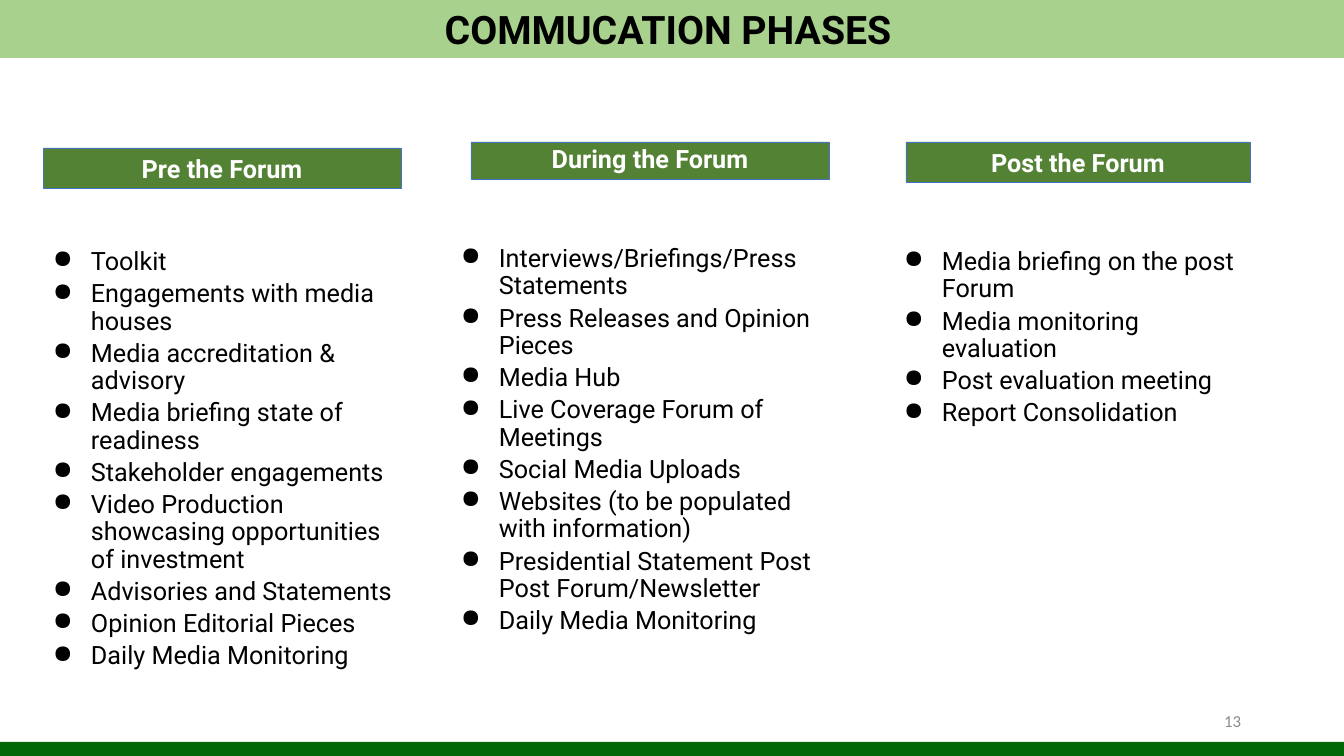
from dataclasses import dataclass

from lxml.etree import SubElement
from pptx import Presentation
from pptx.dml.color import RGBColor
from pptx.enum.shapes import MSO_SHAPE as Shape
from pptx.enum.text import MSO_ANCHOR as Anchor, MSO_AUTO_SIZE as AutoSize, PP_ALIGN as Align
from pptx.oxml.ns import qn
from pptx.util import Pt

TITLE = "COMMUCATION PHASES"
PAGE_NUMBER = "13"
PHASES = [
    {
        "name": "Pre the Forum",
        "bar": (43, 148, 358, 40),
        "list": (43, 244, 363, 499),
        "spacing": 1.0,
        "items": [
            "Toolkit",
            "Engagements with media houses",
            "Media accreditation & advisory",
            "Media briefing state of readiness",
            "Stakeholder engagements",
            "Video Production showcasing opportunities of investment",
            "Advisories and Statements",
            "Opinion Editorial Pieces",
            "Daily Media Monitoring",
        ],
    },
    {
        "name": "During the Forum",
        "bar": (471, 142, 358, 37),
        "list": (451, 241, 382, 499),
        "spacing": 0.9,
        "items": [
            "Interviews/Briefings/Press Statements",
            "Press Releases and Opinion Pieces",
            "Media Hub",
            "Live Coverage Forum of Meetings",
            "Social Media Uploads",
            "Websites (to be populated with information)",
            "Presidential Statement Post Post Forum/Newsletter",
            "Daily Media Monitoring",
        ],
    },
    {
        "name": "Post the Forum",
        "bar": (906, 142, 344, 40),
        "list": (894, 244, 369, 499),
        "spacing": 1.0,
        "items": [
            "Media briefing on the post Forum",
            "Media monitoring evaluation",
            "Post evaluation meeting",
            "Report Consolidation",
        ],
    },
]


@dataclass(frozen=True)
class Theme:
    font: str = "Roboto"
    number_font: str = "Calibri"
    title_size: int = 28
    body_size: int = 18
    number_size: int = 12
    black: str = "000000"
    white: str = "FFFFFF"
    grey: str = "8C8C8C"
    band: str = "A9D18E"
    bar: str = "548235"
    outline: str = "4472C4"
    footer: str = "006806"


THEME = Theme()
WIDTH, HEIGHT = 1344, 756
INDENT, TAB = 38, 113
ITEM_GAP = 3.6


def px(length):
    return round(length * 914400 / 100.8)


def style(para, size, color, font=THEME.font, bold=False):
    para.font.name = font
    para.font.size = Pt(size)
    para.font.bold = bold
    para.font.color.rgb = RGBColor.from_string(color)


def add_bar(page, frame, fill, outline=None):
    bar = page.shapes.add_shape(Shape.RECTANGLE, *map(px, frame))
    bar.shadow.inherit = False
    bar.fill.solid()
    bar.fill.fore_color.rgb = RGBColor.from_string(fill)
    if outline:
        bar.line.color.rgb = RGBColor.from_string(outline)
        bar.line.width = Pt(0.5)
    else:
        bar.line.fill.background()
    return bar


def add_label(box, text, size, color, align=Align.CENTER, anchor=Anchor.MIDDLE, **font):
    frame = box.text_frame
    frame.word_wrap = True
    frame.vertical_anchor = anchor
    para = frame.paragraphs[0]
    para.text = text
    para.alignment = align
    style(para, size, color, **font)
    return para


def add_bullet(para):
    props = para._p.get_or_add_pPr()
    props.set("marL", str(px(INDENT)))
    props.set("indent", str(-px(INDENT)))
    SubElement(props, qn("a:buChar"), char="●")
    tabs = SubElement(props, qn("a:tabLst"))
    SubElement(tabs, qn("a:tab"), pos=str(px(TAB)), algn="l")


def add_list(page, frame, items):
    box = page.shapes.add_textbox(*map(px, frame))
    text = box.text_frame
    text.word_wrap = True
    for index, item in enumerate(items):
        para = text.add_paragraph() if index else text.paragraphs[0]
        para.text = item
        add_bullet(para)
        para.line_spacing = 0.9
        para.space_before = Pt(ITEM_GAP if index else 0)
        style(para, THEME.body_size, THEME.black)


def add_phase(page, phase):
    bar = add_bar(page, phase["bar"], THEME.bar, THEME.outline)
    para = add_label(bar, phase["name"], THEME.body_size, THEME.white,
                     anchor=Anchor.TOP, bold=True)
    para.line_spacing = phase["spacing"]
    bar.text_frame.auto_size = AutoSize.SHAPE_TO_FIT_TEXT
    add_list(page, phase["list"], phase["items"])


def main():
    deck = Presentation()
    deck.slide_width, deck.slide_height = px(WIDTH), px(HEIGHT)
    page = deck.slides.add_slide(deck.slide_layouts[6])

    add_bar(page, (0, 742, WIDTH, 14), THEME.footer)
    number = page.shapes.add_textbox(*map(px, (949, 701, 302, 40)))
    add_label(number, PAGE_NUMBER, THEME.number_size, THEME.grey,
              align=Align.RIGHT, font=THEME.number_font)

    for phase in PHASES:
        add_phase(page, phase)

    band = add_bar(page, (0, 0, WIDTH, 58), THEME.band)
    add_label(band, TITLE, THEME.title_size, THEME.black, bold=True)
    band.text_frame.margin_right = px(18)

    deck.save("out.pptx")


if __name__ == "__main__":
    main()
